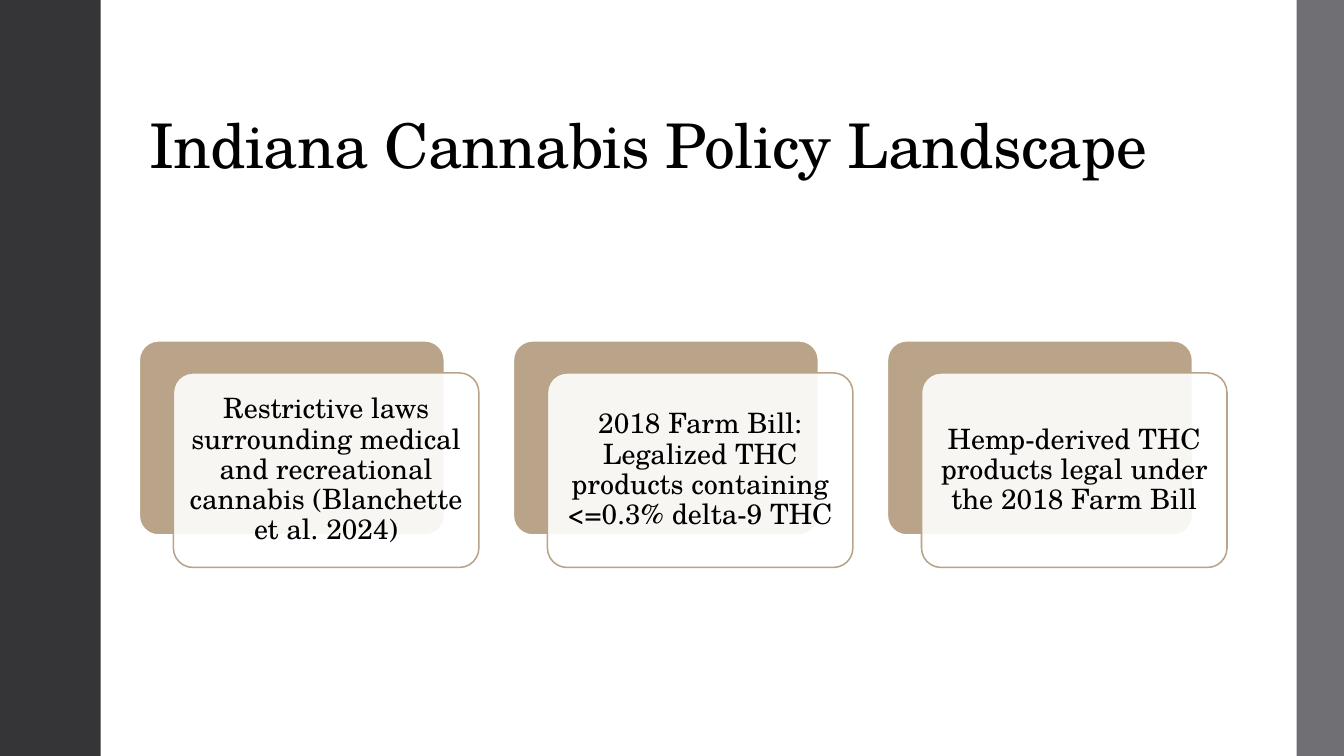
from dataclasses import dataclass

from lxml import etree
from pptx import Presentation
from pptx import util as u
from pptx.dml.color import RGBColor
from pptx.enum import shapes, text
from pptx.oxml import ns

TITLE = "Indiana Cannabis Policy Landscape"
CARDS = [
    "Restrictive laws surrounding medical and recreational cannabis (Blanchette et al. 2024)",
    "2018 Farm Bill: Legalized THC products containing <=0.3% delta-9 THC",
    "Hemp-derived THC products legal under the 2018 Farm Bill",
]


@dataclass(frozen=True)
class Theme:
    font: str = "TeX Gyre Schola"
    ink: str = "000000"
    white: str = "FFFFFF"
    dark: str = "353537"
    gray: str = "6F6F74"
    tan: str = "B9A489"
    head: int = 44
    body: int = 20


T = Theme()
PX = 9144  # EMU, 100 px to the inch
SIZE = (1333, 750)
HEAD = (138, 40, 1078, 145)
BARS = [(0, 100, T.dark), (1286, 50, T.gray)]  # left, width, colour
LEFT, TOP, STEP = 138, 338, 371
WIDE, HIGH = 303, 193
SHIFT = (34, 32)
INSET = 8


def color(code):
    return RGBColor.from_string(code)


def put(obj, **vals):
    for key, val in vals.items():
        setattr(obj, key, val)


def add_box(slide, kind, box, fill, line=None, width=0):
    shape = slide.shapes.add_shape(kind, *(n * PX for n in box))
    shape.shadow.inherit = False
    shape.fill.solid()
    shape.fill.fore_color.rgb = color(fill)
    if line:
        shape.line.color.rgb = color(line)
        shape.line.width = u.Pt(width)
    else:
        shape.line.fill.background()
    return shape


def add_card(slide, left, words):
    """Draw a tan panel with a translucent text panel shifted over it."""
    kind = shapes.MSO_SHAPE.ROUNDED_RECTANGLE
    back = add_box(slide, kind, (left, TOP, WIDE, HIGH), T.tan, T.white, 1.35)
    box = (left + SHIFT[0], TOP + SHIFT[1], WIDE, HIGH)
    front = add_box(slide, kind, box, T.white, T.tan, 1.1)
    for panel in (back, front):
        panel.adjustments[0] = 0.1
    tint = front.fill._xPr.find(".//" + ns.qn("a:srgbClr"))
    etree.SubElement(tint, ns.qn("a:alpha"), val="90000")
    sides = ("left", "top", "right", "bottom")
    put(front.text_frame, **{f"margin_{side}": INSET * PX for side in sides})
    write(front.text_frame, words, T.body,
          text.PP_ALIGN.CENTER, text.MSO_ANCHOR.MIDDLE)


def write(frame, words, size, align, anchor):
    put(frame, text=words, word_wrap=True, vertical_anchor=anchor,
        auto_size=text.MSO_AUTO_SIZE.NONE)
    para = frame.paragraphs[0]
    put(para, alignment=align, line_spacing=0.9)
    run = para.runs[0]
    put(run.font, name=T.font, size=u.Pt(size))
    run.font.color.rgb = color(T.ink)
    return run


def main():
    deck = Presentation()
    put(deck, slide_width=SIZE[0] * PX, slide_height=SIZE[1] * PX)
    slide = deck.slides.add_slide(deck.slide_layouts[5])

    title = slide.shapes.title
    put(title, **dict(zip(("left", "top", "width", "height"),
                          (n * PX for n in HEAD))))
    run = write(title.text_frame, TITLE, T.head,
                text.PP_ALIGN.LEFT, text.MSO_ANCHOR.BOTTOM)
    run.font._element.set("spc", "-50")

    for left, width, fill in BARS:
        add_box(slide, shapes.MSO_SHAPE.RECTANGLE,
                (left, 0, width, SIZE[1]), fill)
    for i, words in enumerate(CARDS):
        add_card(slide, LEFT + i * STEP, words)
    deck.save("out.pptx")


if __name__ == "__main__":
    main()
